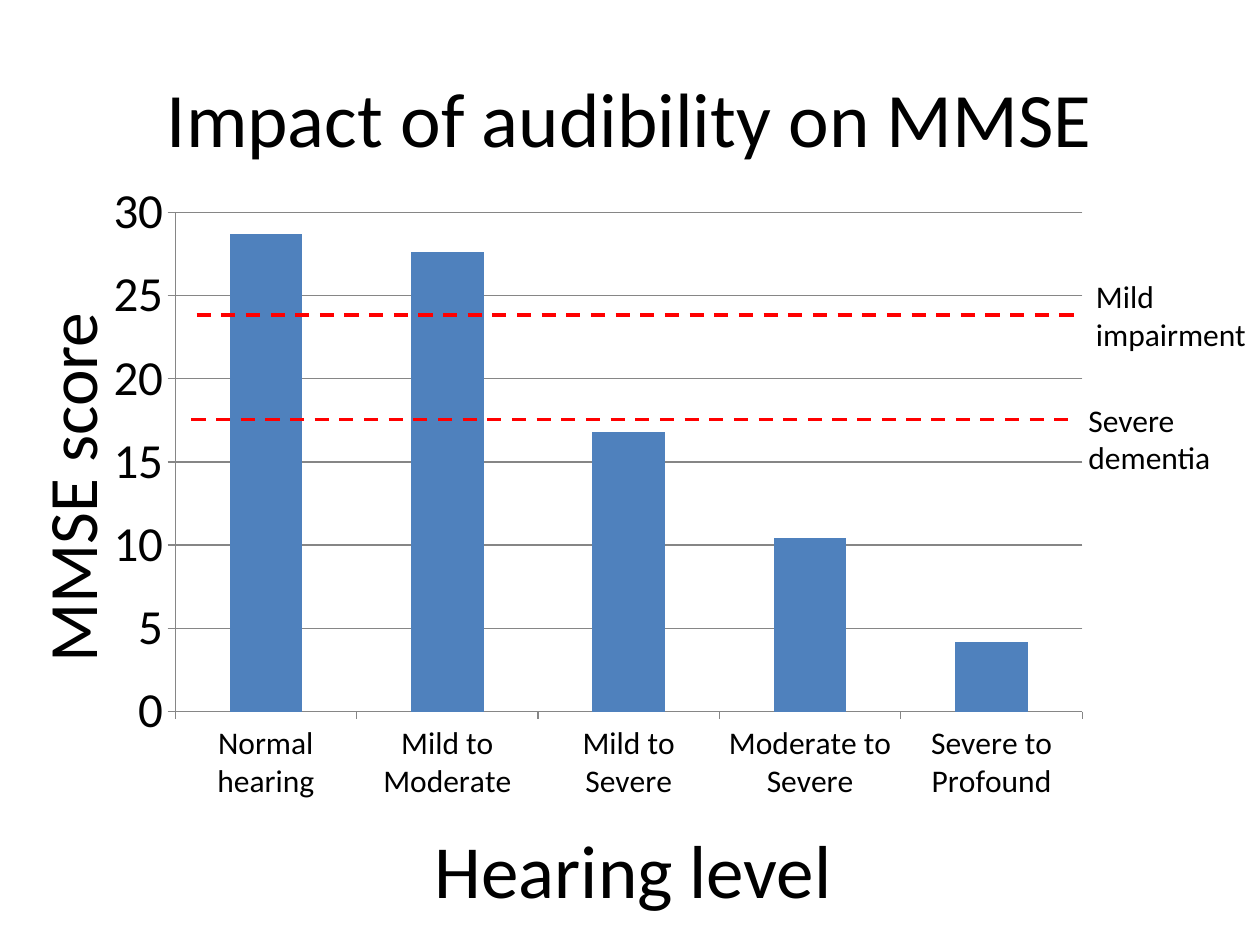
from lxml.etree import SubElement
from pptx import Presentation
from pptx.chart.data import CategoryChartData
from pptx.dml.color import RGBColor
from pptx.enum.chart import XL_CHART_TYPE, XL_TICK_MARK
from pptx.enum.dml import MSO_LINE
from pptx.enum.shapes import MSO_CONNECTOR
from pptx.enum.text import MSO_ANCHOR, MSO_AUTO_SIZE, PP_ALIGN
from pptx.oxml.ns import qn
from pptx.util import Pt

# Content: boxes are left, top, width, height in points
FONT = "Calibri"
BLACK, BLUE, RED, GREY = "000000", "4F81BD", "FF0000", "868686"

SCORES = {
    "Normal hearing": 28.7,
    "Mild to Moderate": 27.6,
    "Mild to Severe": 16.8,
    "Moderate to Severe": 10.4,
    "Severe to Profound": 4.2,
}
CHART_BOX = (54, 95.76, 576, 365.76)
PLOT_LAYOUT = {"x": 0.08, "y": 0.07, "w": 0.9, "h": 0.78}  # shares of the chart

SCORE_TITLE = ("MMSE score", (-95.04, 250.56, 270, 56.16), 39.6)
HEADINGS = [
    ("Hearing level", (226.8, 468, 270, 56.16), 42.9),
    ("Impact of audibility on MMSE", (36, 21.6, 648, 90), 44),
]
# Line left and top, label lines, label box
THRESHOLD_LENGTH = 505.44
THRESHOLDS = [
    (112.32, 180, ["Mild", "impairment"], (619.2, 154.8, 100.8, 51.12)),
    (109.44, 239.76, ["Severe", "dementia"], (614.88, 225.36, 84.96, 51.12)),
]


def color(hex_code):
    return RGBColor.from_string(hex_code)


def points(box):
    return [Pt(length) for length in box]


def set_font(font, size):
    font.name, font.size = FONT, Pt(size)
    font.color.rgb = color(BLACK)


def write_heading(shape, text, size):
    frame = shape.text_frame
    frame.auto_size = MSO_AUTO_SIZE.NONE
    frame.word_wrap = True
    frame.vertical_anchor = MSO_ANCHOR.MIDDLE
    frame.text = text
    paragraph = frame.paragraphs[0]
    paragraph.alignment = PP_ALIGN.CENTER
    set_font(paragraph.font, size)


def style_axis(axis, size):
    axis.major_tick_mark = XL_TICK_MARK.OUTSIDE
    axis.minor_tick_mark = XL_TICK_MARK.NONE
    axis.format.line.color.rgb = color(GREY)
    set_font(axis.tick_labels.font, size)


def place_plot(chart, shares):
    plot_area = chart.plots[0]._element.getparent()
    layout = plot_area.find(qn("c:layout"))
    if layout is None:
        layout = SubElement(plot_area, qn("c:layout"))
        plot_area.insert(0, layout)
    manual = SubElement(layout, qn("c:manualLayout"))
    settings = {"layoutTarget": "inner", "xMode": "edge", "yMode": "edge", **shares}
    for tag, value in settings.items():
        SubElement(manual, qn(f"c:{tag}")).set("val", str(value))


presentation = Presentation()
presentation.slide_width, presentation.slide_height = Pt(720), Pt(540)
slide = presentation.slides.add_slide(presentation.slide_layouts[5])

# Rotated title for the score axis
text, box, size = SCORE_TITLE
score_title = slide.shapes.title
score_title.left, score_title.top, score_title.width, score_title.height = points(box)
score_title.rotation = 270
write_heading(score_title, text, size)

# Column chart
data = CategoryChartData()
data.categories = list(SCORES)
data.add_series("Series 1", list(SCORES.values()))
chart = slide.shapes.add_chart(
    XL_CHART_TYPE.COLUMN_CLUSTERED, *points(CHART_BOX), data
).chart
chart.has_legend = chart.has_title = False
set_font(chart.font, 10)
columns = chart.plots[0]
columns.gap_width = 150
columns.vary_by_categories = False
columns.series[0].format.fill.solid()
columns.series[0].format.fill.fore_color.rgb = color(BLUE)
style_axis(chart.category_axis, 18)
score_axis = chart.value_axis
style_axis(score_axis, 28)
score_axis.minimum_scale, score_axis.maximum_scale, score_axis.major_unit = 0, 30, 5
score_axis.has_major_gridlines = True
score_axis.major_gridlines.format.line.color.rgb = color(GREY)
place_plot(chart, PLOT_LAYOUT)

# Headings
for text, box, size in HEADINGS:
    write_heading(slide.shapes.add_textbox(*points(box)), text, size)

# Dashed thresholds with their labels
for left, top, label_lines, label_box in THRESHOLDS:
    threshold = slide.shapes.add_connector(
        MSO_CONNECTOR.STRAIGHT, *points((left, top, left + THRESHOLD_LENGTH, top))
    )
    threshold.line.color.rgb = color(RED)
    threshold.line.width = Pt(2)
    threshold.line.dash_style = MSO_LINE.DASH
    SubElement(threshold._element.spPr, qn("a:effectLst"))

    label = slide.shapes.add_textbox(*points(label_box)).text_frame
    label.word_wrap = False
    label.auto_size = MSO_AUTO_SIZE.SHAPE_TO_FIT_TEXT
    label.text = "\n".join(label_lines)
    for paragraph in label.paragraphs:
        set_font(paragraph.font, 18)

presentation.save("out.pptx")
